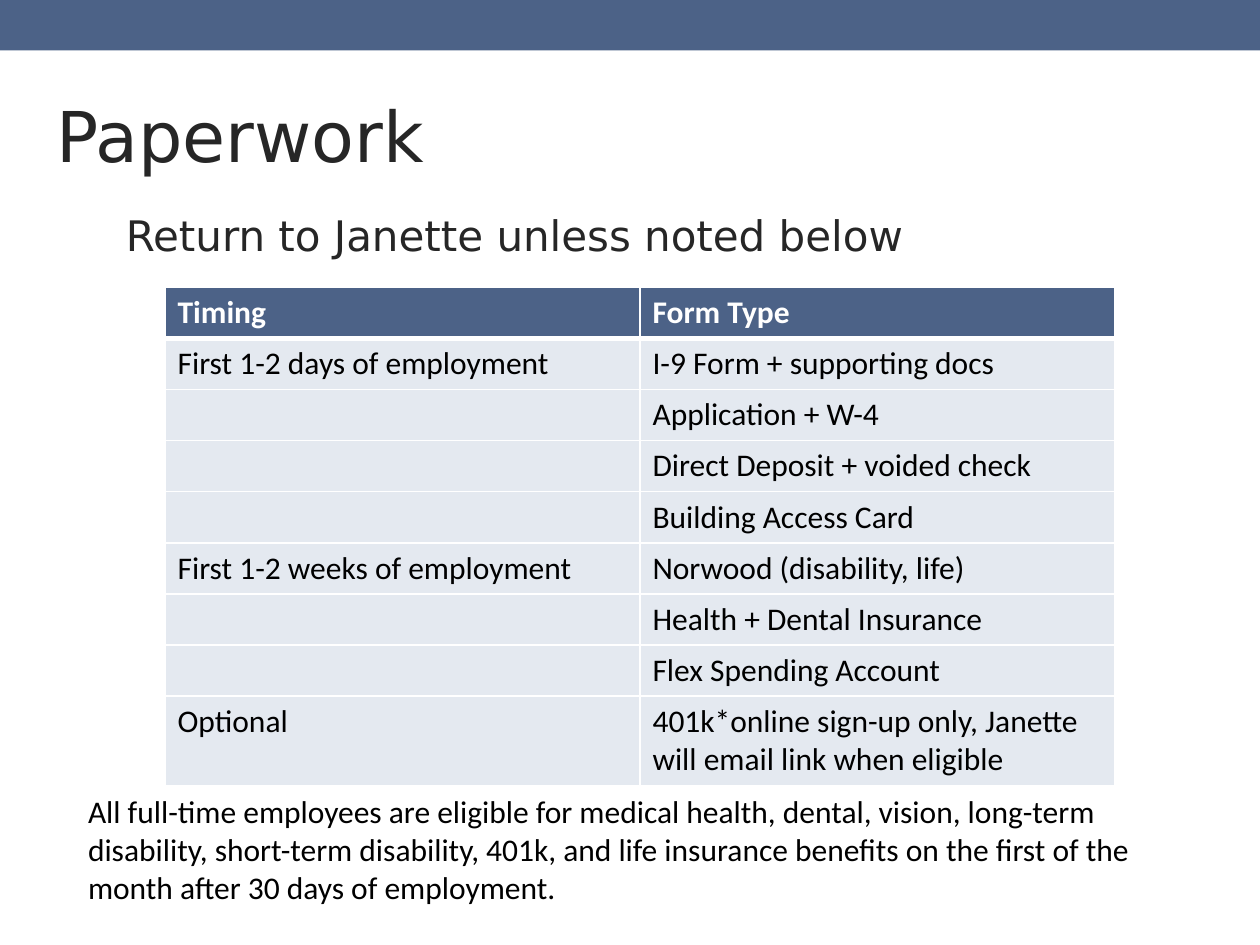
from dataclasses import dataclass

from lxml.etree import SubElement
from pptx import Presentation
from pptx.dml.color import RGBColor
from pptx.enum.shapes import MSO_SHAPE
from pptx.enum.text import MSO_ANCHOR, MSO_AUTO_SIZE, PP_ALIGN
from pptx.oxml.ns import qn
from pptx.util import Pt


@dataclass(frozen=True)
class Theme:
    """Colours, fonts and type sizes."""

    accent: str = "4C6287"
    row_fill: str = "E4E9F0"
    heading: str = "262626"
    body: str = "000000"
    white: str = "FFFFFF"
    heading_font: str = "DejaVu Sans"
    body_font: str = "Calibri"
    title_size: int = 40
    subtitle_size: int = 24
    body_size: int = 18
    rule: int = 1
    header_rule: int = 3


class SlideBuilder:
    """Draws styled elements on one slide, measured in points."""

    def __init__(self, slide, theme):
        self.slide = slide
        self.theme = theme

    def band(self, left, top, width, height):
        """Draw a filled bar without an outline."""
        shape = self.slide.shapes.add_shape(
            MSO_SHAPE.RECTANGLE, Pt(left), Pt(top), Pt(width), Pt(height))
        shape.shadow.inherit = False
        shape.fill.solid()
        shape.fill.fore_color.rgb = RGBColor.from_string(self.theme.accent)
        shape.line.fill.background()

    def style(self, paragraph, font_name, size, color, bold=False):
        """Format one paragraph."""
        paragraph.alignment = PP_ALIGN.LEFT
        font = paragraph.font
        font.name, font.size, font.bold = font_name, Pt(size), bold
        font.color.rgb = RGBColor.from_string(color)

    def fill_frame(self, shape, text, font_name, size, color):
        """Put one wrapped, top-anchored paragraph in a shape."""
        frame = shape.text_frame
        frame.text = text
        frame.word_wrap = True
        frame.auto_size = MSO_AUTO_SIZE.NONE
        frame.vertical_anchor = MSO_ANCHOR.TOP
        paragraph = frame.paragraphs[0]
        paragraph.line_spacing = 1.0
        paragraph.space_before = Pt(0)
        self.style(paragraph, font_name, size, color)

    def title(self, text, left, top, width, height):
        """Place and format the title placeholder."""
        title = self.slide.shapes.title
        title.left, title.top = Pt(left), Pt(top)
        title.width, title.height = Pt(width), Pt(height)
        theme = self.theme
        self.fill_frame(title, text, theme.heading_font, theme.title_size, theme.heading)

    def text(self, text, left, top, width, height, font_name, size, color):
        """Add a text box."""
        box = self.slide.shapes.add_textbox(Pt(left), Pt(top), Pt(width), Pt(height))
        self.fill_frame(box, text, font_name, size, color)

    def borders(self, cell, top, bottom):
        """Rule all four sides of a cell in white."""
        properties = cell._tc.get_or_add_tcPr()
        widths = {"lnL": self.theme.rule, "lnR": self.theme.rule, "lnT": top, "lnB": bottom}
        for side, width in widths.items():
            line = SubElement(properties, qn(f"a:{side}"), w=str(Pt(width)))
            fill = SubElement(line, qn("a:solidFill"))
            SubElement(fill, qn("a:srgbClr"), val=self.theme.white)

    def table(self, rows, left, top, width, row_height):
        """Add a table whose first row is the header."""
        theme = self.theme
        table = self.slide.shapes.add_table(
            len(rows), len(rows[0]), Pt(left), Pt(top),
            Pt(width), Pt(row_height * len(rows))).table
        for row_index, row in enumerate(rows):
            header = row_index == 0
            table.rows[row_index].height = Pt(row_height)
            for column_index, text in enumerate(row):
                cell = table.cell(row_index, column_index)
                cell.text = text
                self.borders(cell,
                             theme.header_rule if row_index == 1 else theme.rule,
                             theme.header_rule if header else theme.rule)
                cell.fill.solid()
                cell.fill.fore_color.rgb = RGBColor.from_string(
                    theme.accent if header else theme.row_fill)
                self.style(cell.text_frame.paragraphs[0], theme.body_font, theme.body_size,
                           theme.white if header else theme.body, header)


FORM_ROWS = [
    ("Timing", "Form Type"),
    ("First 1-2 days of employment", "I-9 Form + supporting docs"),
    ("", "Application + W-4"),
    ("", "Direct Deposit + voided check"),
    ("", "Building Access Card"),
    ("First 1-2 weeks of employment", "Norwood (disability, life)"),
    ("", "Health + Dental Insurance"),
    ("", "Flex Spending Account"),
    ("Optional", "401k*online sign-up only, Janette will email link when eligible"),
]

ELIGIBILITY = (
    "All full-time employees are eligible for medical health, dental, vision, long-term "
    "disability, short-term disability, 401k, and life insurance benefits on the first of "
    "the month after 30 days of employment."
)


def main():
    """Build the paperwork slide."""
    presentation = Presentation()
    presentation.slide_width, presentation.slide_height = Pt(720), Pt(540)
    theme = Theme()
    slide = presentation.slides.add_slide(presentation.slide_layouts[5])
    builder = SlideBuilder(slide, theme)
    builder.band(-7.2, -8.6, 746, 37.4)
    builder.title("Paperwork", 25.2, 49, 681, 55.4)
    builder.text("Return to Janette unless noted below", 64.8, 116, 660, 36,
                 theme.heading_font, theme.subtitle_size, theme.heading)
    builder.table(FORM_ROWS, 94.3, 164.2, 542.8, 29.2)
    builder.text(ELIGIBILITY, 43.2, 449.3, 633, 72.7,
                 theme.body_font, theme.body_size, theme.body)
    presentation.save("out.pptx")


if __name__ == "__main__":
    main()
